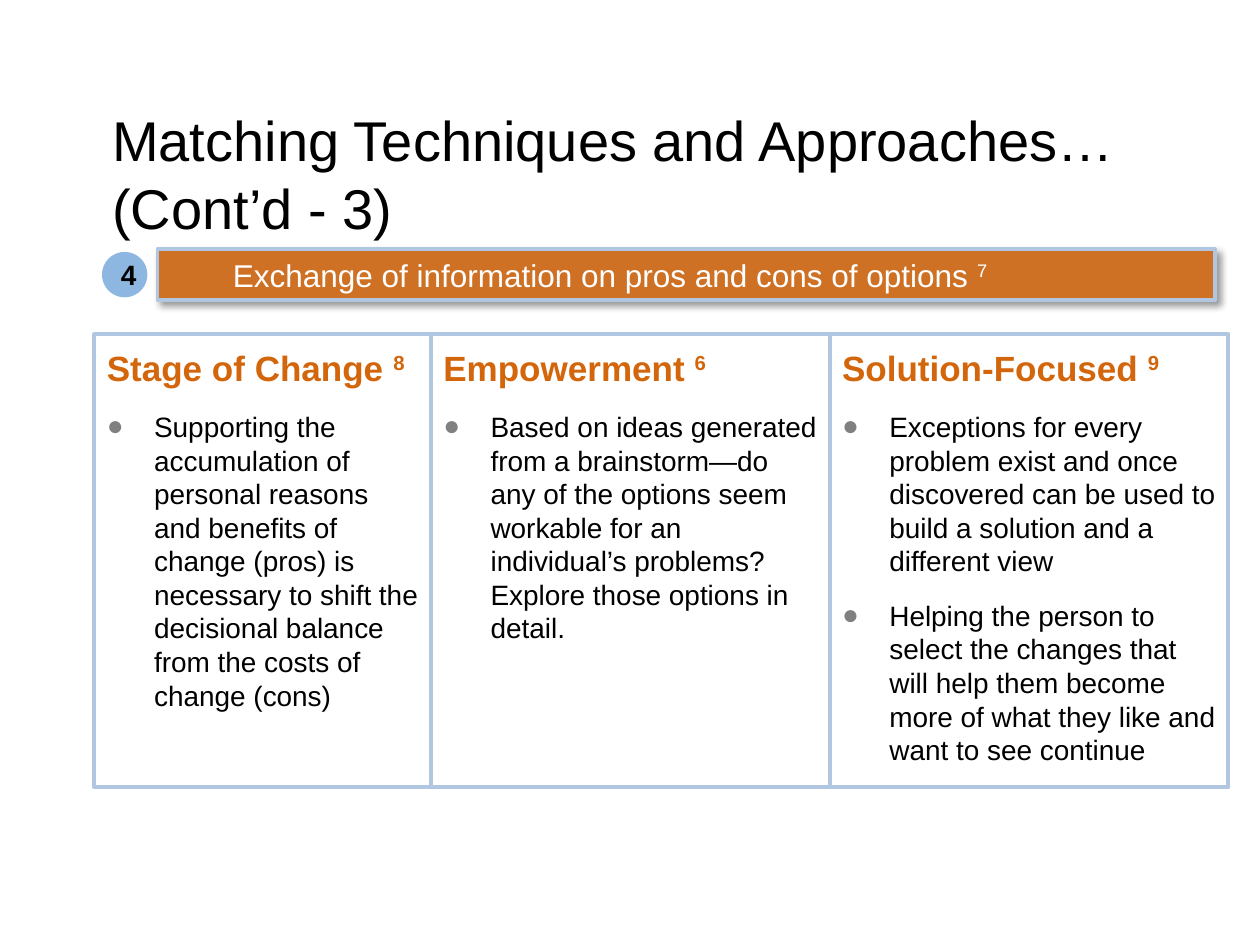
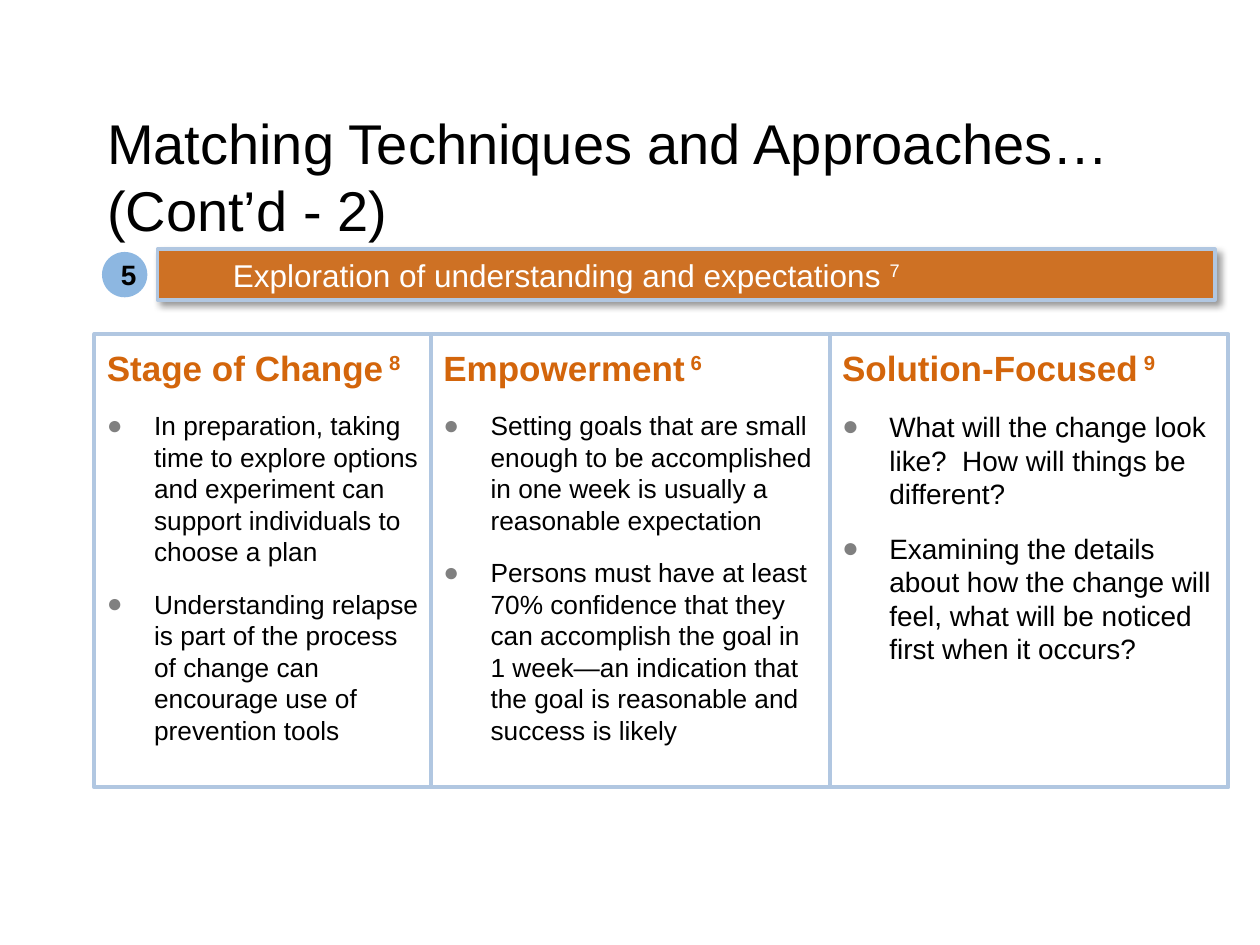
from lxml import etree
from pptx import Presentation
from pptx import util as u
from pptx.dml.color import RGBColor
from pptx.enum import shapes, text
from pptx.oxml import parse_xml
from pptx.oxml.ns import nsdecls, qn

COLOURS = {"text": "000000", "white": "FFFFFF", "badge": "8DB7E1", "band": "CE7124",
           "border": "B1C7E1", "heading": "D3650B", "bullet": "808080"}
STYLES = {
    "title": ({"size": u.Pt(32), "bold": False}, "text"),
    "badge": ({"size": u.Pt(16), "bold": True}, "text"),
    "band": ({"size": u.Pt(18), "bold": False}, "white"),
    "heading": ({"size": u.Pt(20), "bold": True}, "heading"),
    "bullet": ({"size": u.Pt(16), "bold": False}, "text"),
    "small bullet": ({"size": u.Pt(15), "bold": False}, "text"),
}
COLUMN_NAMES = ["Stage of Change", "Empowerment", "Solution-Focused"]
COLUMN_NOTES = ["8", "6", "9"]
COLUMN_WIDTHS = [2.67, 3.165, 3.165]
INSETS = {"margin_left": 0.1, "margin_top": 0.1, "margin_right": 0.1, "margin_bottom": 0.05}
SHADOW = f"""<a:effectLst {nsdecls("a")}>
  <a:outerShdw blurRad="50800" dist="38100" dir="2700000" algn="tl" rotWithShape="0">
    <a:srgbClr val="{COLOURS["text"]}"><a:alpha val="40000"/></a:srgbClr>
  </a:outerShdw>
</a:effectLst>"""

SLIDES = [
    {
        "title": "Matching Techniques and Approaches… (Cont’d - 3)",
        "title_position": (0.79, 0.79),
        "number": "4",
        "band": "Exchange of information on pros and cons of options ",
        "note_gap": (" ", ""),
        "bullet_styles": ["bullet", "bullet", "bullet"],
        "columns": [
            ["Supporting the accumulation of personal reasons and benefits of change (pros) is "
             "necessary to shift the decisional balance from the costs of change (cons)"],
            ["Based on ideas generated from a brainstorm—do any of the options seem workable "
             "for an individual’s problems? Explore those options in detail."],
            ["Exceptions for every problem exist and once discovered can be used to build a "
             "solution and a different view",
             "Helping the person to select the changes that will help them become more of what "
             "they like and want to see continue"],
        ],
    },
    {
        "title": "Matching Techniques and Approaches…\v(Cont’d - 2)",
        "title_position": (0.75, 0.81),
        "number": "5",
        "band": "Exploration of understanding and expectations ",
        "note_gap": ("", " "),
        "bullet_styles": ["small bullet", "small bullet", "bullet"],
        "columns": [
            ["In preparation, taking time to explore options and experiment can support "
             "individuals to choose a plan",
             "Understanding relapse is part of the process of change can encourage use of "
             "prevention tools"],
            ["Setting goals that are small enough to be accomplished in one week is usually a "
             "reasonable expectation",
             "Persons must have at least 70% confidence that they can accomplish the goal in "
             "1 week—an indication that the goal is reasonable and success is likely"],
            ["What will the change look like?  How will things be different?",
             "Examining the details about how the change will feel, what will be noticed first "
             "when it occurs?"],
        ],
    },
]


def write(paragraph, words, style, note="", alignment=text.PP_ALIGN.LEFT):
    """Fill a paragraph in a named style, with an optional superscript note."""
    values, colour = STYLES[style]
    paragraph.alignment = alignment
    paragraph.text = words
    if note:
        run = paragraph.add_run()
        run.text = note
        run._r.get_or_add_rPr().set("baseline", "30000")
    for run in paragraph.runs:
        run.font.name = "Arial"
        run.font.color.rgb = RGBColor.from_string(COLOURS[colour])
        for name, value in values.items():
            setattr(run.font, name, value)


def add_box(slide, kind, position, fill=None, border=None):
    shape = slide.shapes.add_shape(kind, *[u.Inches(length) for length in position])
    shape.shadow.inherit = False
    if fill:
        shape.fill.solid()
        shape.fill.fore_color.rgb = RGBColor.from_string(COLOURS[fill])
    else:
        shape.fill.background()
    if border:
        shape.line.color.rgb = RGBColor.from_string(COLOURS[border])
        shape.line.width = u.Pt(2.25)
    else:
        shape.line.fill.background()
    shape.text_frame.word_wrap = True
    shape.text_frame.vertical_anchor = text.MSO_ANCHOR.TOP
    return shape


presentation = Presentation()
presentation.slide_width = u.Inches(10)
presentation.slide_height = u.Inches(7.5)

for content in SLIDES:
    slide = presentation.slides.add_slide(presentation.slide_layouts[5])

    title = slide.shapes.title
    title.left, title.top = [u.Inches(length) for length in content["title_position"]]
    title.width, title.height = u.Inches(8.95), u.Inches(0.92)
    title.text_frame.auto_size = text.MSO_AUTO_SIZE.NONE
    title.text_frame.vertical_anchor = text.MSO_ANCHOR.TOP
    write(title.text_frame.paragraphs[0], content["title"], "title")

    badge = add_box(slide, shapes.MSO_SHAPE.OVAL, (0.81, 2, 0.36, 0.36), fill="badge")
    badge.text_frame.vertical_anchor = text.MSO_ANCHOR.MIDDLE
    write(badge.text_frame.paragraphs[0], content["number"], "badge",
          alignment=text.PP_ALIGN.CENTER)

    band = add_box(slide, shapes.MSO_SHAPE.RECTANGLE, (1.25, 1.98, 8.39, 0.4), "band", "border")
    band_properties = band._element.spPr
    band_properties.replace(band_properties.find(qn("a:effectLst")), parse_xml(SHADOW))
    band.text_frame.auto_size = text.MSO_AUTO_SIZE.SHAPE_TO_FIT_TEXT
    paragraph = band.text_frame.paragraphs[0]
    write(paragraph, content["band"], "band", "7")
    paragraph._p.get_or_add_pPr().set("marL", str(u.Inches(0.5)))

    left = 0.75
    before, after = content["note_gap"]
    for name, note, width, style, bullets in zip(
            COLUMN_NAMES, COLUMN_NOTES, COLUMN_WIDTHS,
            content["bullet_styles"], content["columns"]):
        column = add_box(slide, shapes.MSO_SHAPE.RECTANGLE, (left, 2.65, width, 3.6),
                         border="border")
        left += width
        for margin, length in INSETS.items():
            setattr(column.text_frame, margin, u.Inches(length))
        write(column.text_frame.paragraphs[0], name + before, "heading", after + note)
        for bullet in bullets:
            paragraph = column.text_frame.add_paragraph()
            properties = paragraph._p.get_or_add_pPr()
            properties.set("marL", str(u.Inches(0.375)))
            properties.set("indent", str(u.Inches(-0.375)))
            bullet_colour = etree.SubElement(properties, qn("a:buClr"))
            etree.SubElement(bullet_colour, qn("a:srgbClr"), val=COLOURS["bullet"])
            etree.SubElement(properties, qn("a:buFont"), typeface="Arial")
            etree.SubElement(properties, qn("a:buChar"), char="●")
            paragraph.space_before = u.Pt(12)
            write(paragraph, bullet, style)

presentation.save("out.pptx")
